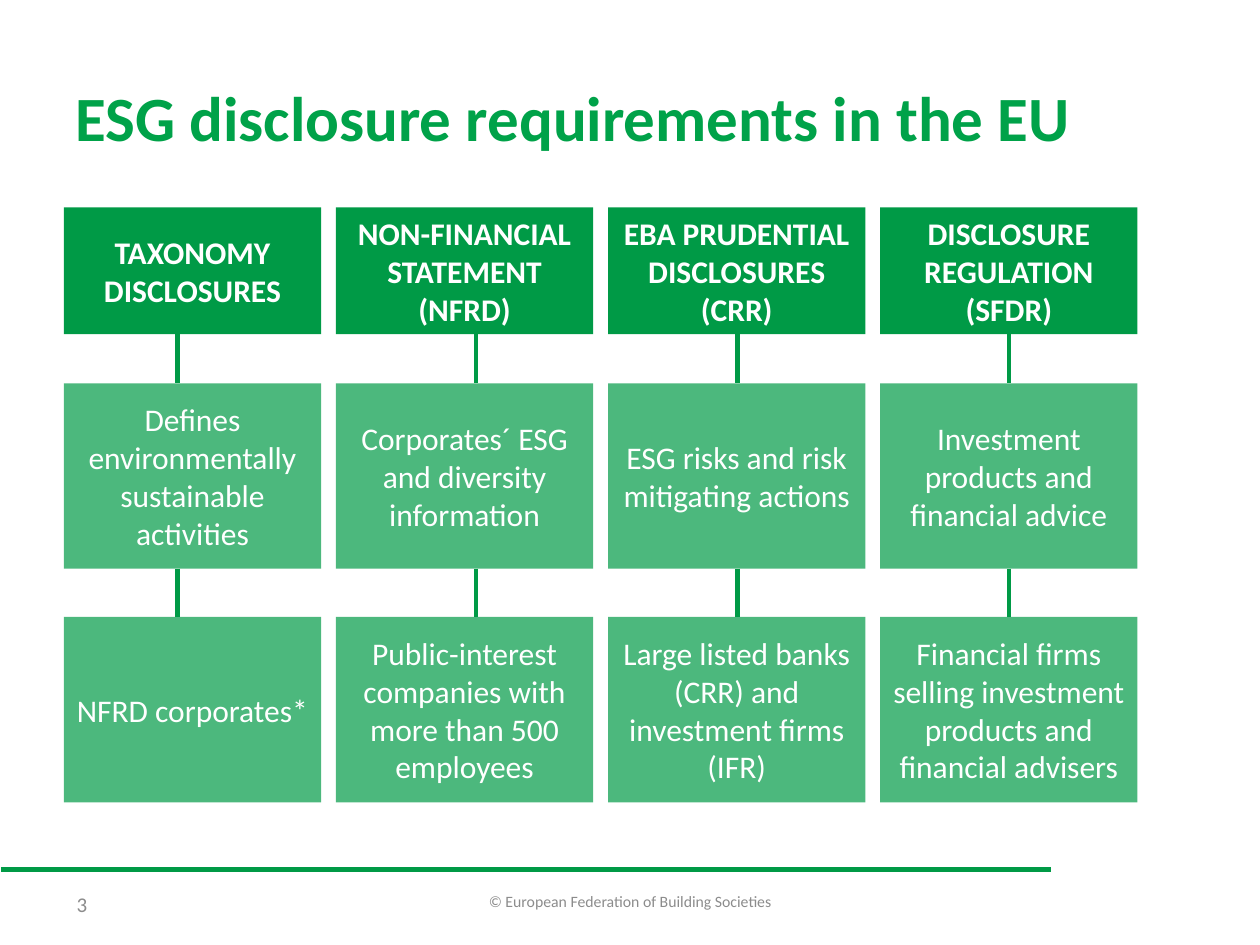
from lxml import etree
from pptx import Presentation
from pptx.dml.color import RGBColor
from pptx.enum import shapes, text
from pptx.oxml import ns
from pptx.util import Pt

GREEN = RGBColor(0x00, 0x9A, 0x46)
TITLE_GREEN = RGBColor(0x00, 0xA2, 0x49)
GRAY = RGBColor(0x8C, 0x8C, 0x8C)
WHITE = RGBColor(0xFF, 0xFF, 0xFF)

BOX_LEFT, BOX_WIDTH, COLUMN_STEP = 36.5, 147, 155.5
# Top, height and opacity in percent of each row
ROWS = [(118.5, 72.5, 100), (219, 106, 70), (352.5, 106, 70)]
# Connector position and the texts from header to last row
COLUMNS = [
    (101.5, ["TAXONOMY\nDISCLOSURES",
             "Defines environmentally sustainable activities",
             "NFRD corporates*"]),
    (272, ["NON-FINANCIAL\nSTATEMENT\n(NFRD)",
           "Corporates´ ESG and diversity information",
           "Public-interest companies with more than 500 employees"]),
    (421.5, ["EBA PRUDENTIAL DISCLOSURES\n(CRR)",
             "ESG risks and risk mitigating actions",
             "Large listed banks (CRR) and investment firms (IFR)"]),
    (576.5, ["DISCLOSURE REGULATION\n(SFDR)",
             "Investment products and financial advice",
             "Financial firms selling investment products and financial advisers"]),
]
LABELS = [
    ("ESG disclosure requirements in the EU", (36, 21.6, 648, 90),
     36, TITLE_GREEN, True, text.PP_ALIGN.LEFT),
    ("© European Federation of Building Societies", (246, 500.5, 228, 28.8),
     9, GRAY, False, text.PP_ALIGN.CENTER),
    ("3", (36.7, 502.5, 168, 28.8), 12, GRAY, False, text.PP_ALIGN.LEFT),
]


def write(shape, wording, size, color, bold, alignment):
    frame = shape.text_frame
    frame.word_wrap = True
    frame.vertical_anchor = text.MSO_ANCHOR.MIDDLE
    frame.text = wording
    for paragraph in frame.paragraphs:
        paragraph.alignment = alignment
        for run in paragraph.runs:
            run.font.name = "Calibri"
            run.font.size = Pt(size)
            run.font.bold = bold
            run.font.color.rgb = color


def draw_line(start_x, start_y, end_x, end_y, width):
    line = slide.shapes.add_connector(
        shapes.MSO_CONNECTOR.STRAIGHT,
        Pt(start_x), Pt(start_y), Pt(end_x), Pt(end_y))
    line.line.color.rgb = GREEN
    line.line.width = Pt(width)
    properties = line._element.find(ns.qn("p:spPr"))
    etree.SubElement(properties, ns.qn("a:effectLst"))


presentation = Presentation()
presentation.slide_width, presentation.slide_height = Pt(720), Pt(540)
slide = presentation.slides.add_slide(presentation.slide_layouts[6])

draw_line(0.5, 497, 600.5, 497, 3)
for wording, place, size, color, bold, alignment in LABELS:
    label = slide.shapes.add_textbox(*map(Pt, place))
    write(label, wording, size, color, bold, alignment)

for column, (line_x, wordings) in enumerate(COLUMNS):
    for (top, height, _), (next_top, _, _) in zip(ROWS, ROWS[1:]):
        draw_line(line_x, top + height, line_x, next_top, 2.5)

    for (top, height, opacity), wording in zip(ROWS, wordings):
        box = slide.shapes.add_shape(
            shapes.MSO_SHAPE.RECTANGLE,
            Pt(BOX_LEFT + column * COLUMN_STEP), Pt(top), Pt(BOX_WIDTH), Pt(height))
        box.shadow.inherit = False
        box.line.fill.background()
        box.fill.solid()
        box.fill.fore_color.rgb = GREEN
        is_header = opacity == 100
        if not is_header:
            fill_color = box._element.spPr.find(".//" + ns.qn("a:srgbClr"))
            etree.SubElement(fill_color, ns.qn("a:alpha"), val=str(opacity * 1000))
        write(box, wording, 18, WHITE, is_header, text.PP_ALIGN.CENTER)

presentation.save("out.pptx")
